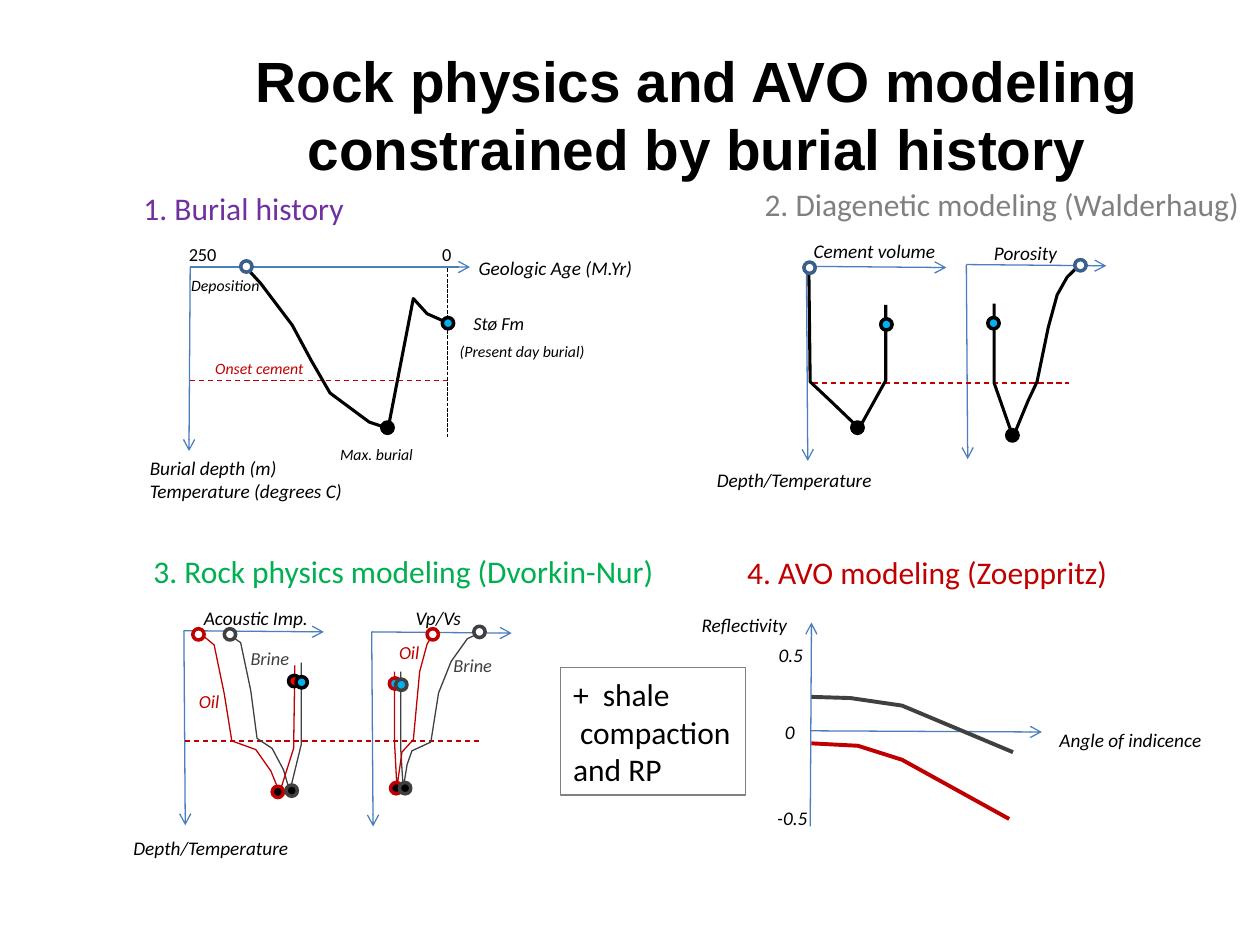
from typing import NamedTuple, Optional

import lxml.etree
import pptx
import pptx.dml.color
import pptx.enum.dml
import pptx.enum.shapes
import pptx.enum.text
import pptx.oxml
import pptx.oxml.ns
import pptx.util

Pt = pptx.util.Pt
qn = pptx.oxml.ns.qn
DASH = pptx.enum.dml.MSO_LINE.DASH
SQUARE_DOT = pptx.enum.dml.MSO_LINE.SQUARE_DOT

BLACK, WHITE, GRAY, CHARCOAL = "000000", "FFFFFF", "808080", "404040"
RED, BRIGHT_RED, AXIS_BLUE, RIM_BLUE = "C00000", "FF0000", "4B7EBC", "3A5F8C"
SKY, PURPLE, GREEN = "00B0F0", "7030A0", "00B050"
DOT_SIZE = 6.5


class Segment(NamedTuple):
    x1: float
    y1: float
    x2: float
    y2: float
    color: str = AXIS_BLUE
    dash: Optional[int] = None
    arrow: bool = True


class Curve(NamedTuple):
    color: str
    weight: float
    points: list[tuple[float, float]]


class Dot(NamedTuple):
    x: float
    y: float
    fill: str
    rim: str = BLACK


class Label(NamedTuple):
    text: str
    left: float
    top: float
    width: float
    size: float = 11
    color: str = BLACK
    italic: bool = True


def rgb(color: str) -> pptx.dml.color.RGBColor:
    return pptx.dml.color.RGBColor.from_string(color)


def style_line(shape, color: str, weight: float) -> None:
    shape.line.color.rgb = rgb(color)
    shape.line.width = Pt(weight)


def draw_segment(shapes, segment: Segment) -> None:
    connector = shapes.add_connector(
        pptx.enum.shapes.MSO_CONNECTOR.STRAIGHT,
        Pt(segment.x1), Pt(segment.y1), Pt(segment.x2), Pt(segment.y2))
    style_line(connector, segment.color, 0.75)
    if segment.dash is not None:
        connector.line.dash_style = segment.dash
    if segment.arrow:
        lxml.etree.SubElement(connector.line._get_or_add_ln(), qn("a:tailEnd"), type="arrow")
    lxml.etree.SubElement(connector._element.spPr, qn("a:effectLst"))


def draw_curve(shapes, curve: Curve) -> None:
    start, *rest = [(Pt(x), Pt(y)) for x, y in curve.points]
    builder = shapes.build_freeform(*start)
    builder.add_line_segments(rest, close=False)
    outline = builder.convert_to_shape()
    outline.shadow.inherit = False
    outline.fill.background()
    style_line(outline, curve.color, curve.weight)


def draw_dot(shapes, dot: Dot) -> None:
    marker = shapes.add_shape(
        pptx.enum.shapes.MSO_SHAPE.OVAL, Pt(dot.x - DOT_SIZE / 2),
        Pt(dot.y - DOT_SIZE / 2), Pt(DOT_SIZE), Pt(DOT_SIZE))
    marker.shadow.inherit = False
    marker.fill.solid()
    marker.fill.fore_color.rgb = rgb(dot.fill)
    style_line(marker, dot.rim, 2)


def write(paragraph, text: str, size: float, color: str = BLACK, italic: bool = False,
          bold: bool = False, face: str = "Calibri") -> None:
    run = paragraph.add_run()
    run.text = text
    run.font.name = face
    run.font.size = Pt(size)
    run.font.color.rgb = rgb(color)
    run.font.italic = italic
    run.font.bold = bold


def draw_label(shapes, label: Label) -> None:
    lines = label.text.split("\n")
    height = 7.2 + 1.22 * label.size * len(lines)
    frame = shapes.add_textbox(
        Pt(label.left), Pt(label.top), Pt(label.width), Pt(height)).text_frame
    frame.word_wrap = False
    for index, line in enumerate(lines):
        paragraph = frame.add_paragraph() if index else frame.paragraphs[0]
        write(paragraph, line, label.size, label.color, label.italic)


def draw_title(shapes) -> None:
    frame = shapes.add_textbox(Pt(74.2), Pt(34.6), Pt(648), Pt(60.5)).text_frame
    frame.word_wrap = True
    frame.vertical_anchor = pptx.enum.text.MSO_ANCHOR.MIDDLE
    frame.paragraphs[0].alignment = pptx.enum.text.PP_ALIGN.CENTER
    write(frame.paragraphs[0], "Rock physics and AVO modeling constrained by burial history",
          32.4, bold=True, face="Arial")


def draw_shale_note(shapes) -> None:
    note = shapes.add_shape(
        pptx.enum.shapes.MSO_SHAPE.RECTANGLE, Pt(320.4), Pt(381.6), Pt(105.8), Pt(72.7))
    note.shadow.inherit = False
    note.fill.background()
    style_line(note, GRAY, 0.75)
    frame = note.text_frame
    frame.word_wrap = False
    for index, line in enumerate(("+\tshale", "compaction", "and RP")):
        paragraph = frame.add_paragraph() if index else frame.paragraphs[0]
        paragraph.alignment = pptx.enum.text.PP_ALIGN.LEFT
        properties = paragraph._p.get_or_add_pPr()
        if index == 0:
            tabs = lxml.etree.SubElement(properties, qn("a:tabLst"))
            lxml.etree.SubElement(tabs, qn("a:tab"), pos=str(Pt(17)), algn="l")
        elif index == 1:
            properties.set("marL", str(Pt(4)))
        write(paragraph, line, 18)


PANEL_ORIGINS = [(460.8, 152.2), (552.2, 151.2), (105.1, 360.4), (212.4, 361.1)]
SEGMENTS = [
    Segment(255.6, 153.4, 255.6, 249.8, BLACK, SQUARE_DOT, False),
    Segment(108.7, 152.6, 268.6, 152.6), Segment(108.7, 152.6, 108, 257.8),
    Segment(463, 472.3, 463.7, 355.7), Segment(463, 417.6, 595.4, 418.3),
    *[Segment(x, y, x + 80, y + 0.7) for x, y in PANEL_ORIGINS],
    *[Segment(x, y, x + 0.8, y + 111.2) for x, y in PANEL_ORIGINS],
    *[Segment(x1, y, x2, y, RED, DASH, False) for x1, x2, y in (
        (108.7, 255.6, 217.4), (464.4, 610.6, 218.9), (105.8, 274.3, 423.4))],
]
CURVES = [
    Curve(BLACK, 1.75, [(140.4, 152.6), (149, 162), (167, 185.8), (177.8, 205.9), (188.6, 224.6),
                        (211, 241.2), (221.8, 244.8), (236.2, 170.6), (244.1, 179.3), (257, 185)]),
    Curve(BLACK, 1.75, [(462.2, 151.2), (463, 218.2), (474.5, 229), (491, 244.8),
                        (506.2, 217.4), (506.2, 174.2)]),
    Curve(BLACK, 1.75, [(619.2, 151.9), (614.9, 153.4), (609.8, 158.4), (604.1, 168.5), (599, 187.2),
                        (592.6, 218.2), (587.5, 229), (578.9, 249.8), (568.1, 218.9), (568.1, 173.5)]),
    Curve(CHARCOAL, 0.75, [(130.3, 362.2), (137.5, 367.2), (143.3, 394.6), (146.9, 421.9), (155.5, 427.7),
                           (162, 439.9), (165.6, 452.2), (172.1, 425.5), (172.1, 378.7)]),
    Curve(RED, 0.75, [(113.8, 361.4), (122.4, 368.6), (128.2, 396.7), (132.5, 423.4), (146.2, 428.4),
                      (154.8, 440.6), (159.8, 452.9), (167.8, 427.7), (168.5, 380.2)]),
    Curve(CHARCOAL, 0.75, [(275, 361.4), (267.1, 365), (257.8, 378), (250.6, 396), (246.2, 424.1),
                           (235.4, 429.1), (232.6, 437), (230.4, 450.7), (229, 428.4), (229, 383.8)]),
    Curve(RED, 0.75, [(247.7, 362.2), (244.1, 367.9), (239.8, 383.8), (236.2, 422.6), (229.7, 429.8),
                      (226.8, 450), (225.4, 423.4), (225.4, 383.8)]),
    Curve(CHARCOAL, 2.25, [(463.7, 398.2), (486, 398.9), (515.5, 403.2), (578.9, 429.8)]),
    Curve(RED, 2.25, [(463.7, 424.8), (490.3, 426.2), (515.5, 434.2), (576.7, 468)]),
]
DOTS = [
    Dot(140.8, 152.3, WHITE, RIM_BLUE), Dot(221.4, 244.4, BLACK), Dot(256, 184.7, SKY),
    Dot(462.6, 153, WHITE, RIM_BLUE), Dot(490, 244.4, BLACK), Dot(506.5, 185.4, SKY),
    Dot(617.4, 151.6, WHITE, RIM_BLUE), Dot(578.5, 248.8, BLACK), Dot(567.7, 184.7, SKY),
    Dot(113.4, 362.5, WHITE, RED), Dot(131.4, 362.5, WHITE, CHARCOAL),
    Dot(158.8, 452.5, BLACK, RED), Dot(166.7, 451.8, BLACK, CHARCOAL),
    Dot(168.1, 389.2, BRIGHT_RED), Dot(172.4, 389.9, SKY),
    Dot(225.7, 390.6, SKY, RED), Dot(229.3, 391.3, SKY, CHARCOAL),
    Dot(226.4, 450.4, BLACK, RED), Dot(231.5, 450.4, BLACK, CHARCOAL),
    Dot(247.3, 362.5, WHITE, RED), Dot(274, 361.1, WHITE, CHARCOAL),
]
LABELS = [
    Label("1. Burial history", 74.9, 104.4, 134.6, 18, PURPLE, False),
    Label("2. Diagenetic modeling (Walderhaug)", 429.8, 102.2, 289.4, 18, GRAY, False),
    Label("3. Rock physics modeling (Dvorkin-Nur)", 80.6, 311.8, 303.8, 18, GREEN, False),
    Label("4. AVO modeling (Zoeppritz)", 419.8, 312.5, 222.5, 18, RED, False),
    Label("Burial depth (m)\nTemperature (degrees C)", 78.5, 257, 126),
    Label("Geologic Age (M.Yr)", 266.4, 142.6, 104.4),
    Label("0", 245.5, 135.4, 20.2, 10.5, italic=False),
    Label("250", 100.8, 135.4, 31, 10.5, italic=False),
    Label("Stø Fm", 263.5, 175, 45.4, 10.5),
    Label("Deposition", 102.2, 154.1, 54, 9), Label("Max. burial", 187.2, 250.6, 56.9, 9),
    Label("(Present day burial)", 255.6, 191.5, 86.4, 9),
    Label("Onset cement", 115.9, 201.6, 65.5, 9, RED),
    Label("Cement volume", 457.9, 133.2, 84.2), Label("Porosity", 560.9, 134.6, 51.1),
    Label("Depth/Temperature", 402.5, 264.2, 104.4), Label("Depth/Temperature", 69.1, 474.5, 104.4),
    Label("Acoustic Imp.", 109.4, 342.7, 74.9), Label("Vp/Vs", 230.4, 342.7, 41.8),
    Label("Oil", 106.6, 391, 26.6, 10.5, RED), Label("Oil", 221, 362.9, 26.6, 10.5, RED),
    Label("Brine", 136.1, 366.5, 36.7, 10.5, CHARCOAL), Label("Brine", 252, 370.1, 36.7, 10.5, CHARCOAL),
    Label("Angle of indicence", 598.3, 412.6, 96.5), Label("Reflectivity", 393.8, 347, 64.1),
    Label("0.5", 437.8, 364.3, 28.8), Label("0", 441.4, 408.2, 20.2), Label("-0.5", 437, 457.2, 32.4),
]


def main() -> None:
    deck = pptx.Presentation()
    deck.slide_width, deck.slide_height = Pt(720), Pt(540)
    shapes = deck.slides.add_slide(deck.slide_layouts[6]).shapes
    draw_title(shapes)
    for draw, items in ((draw_segment, SEGMENTS), (draw_curve, CURVES),
                        (draw_dot, DOTS), (draw_label, LABELS)):
        for item in items:
            draw(shapes, item)
    draw_shale_note(shapes)
    deck.save("out.pptx")


if __name__ == "__main__":
    main()
